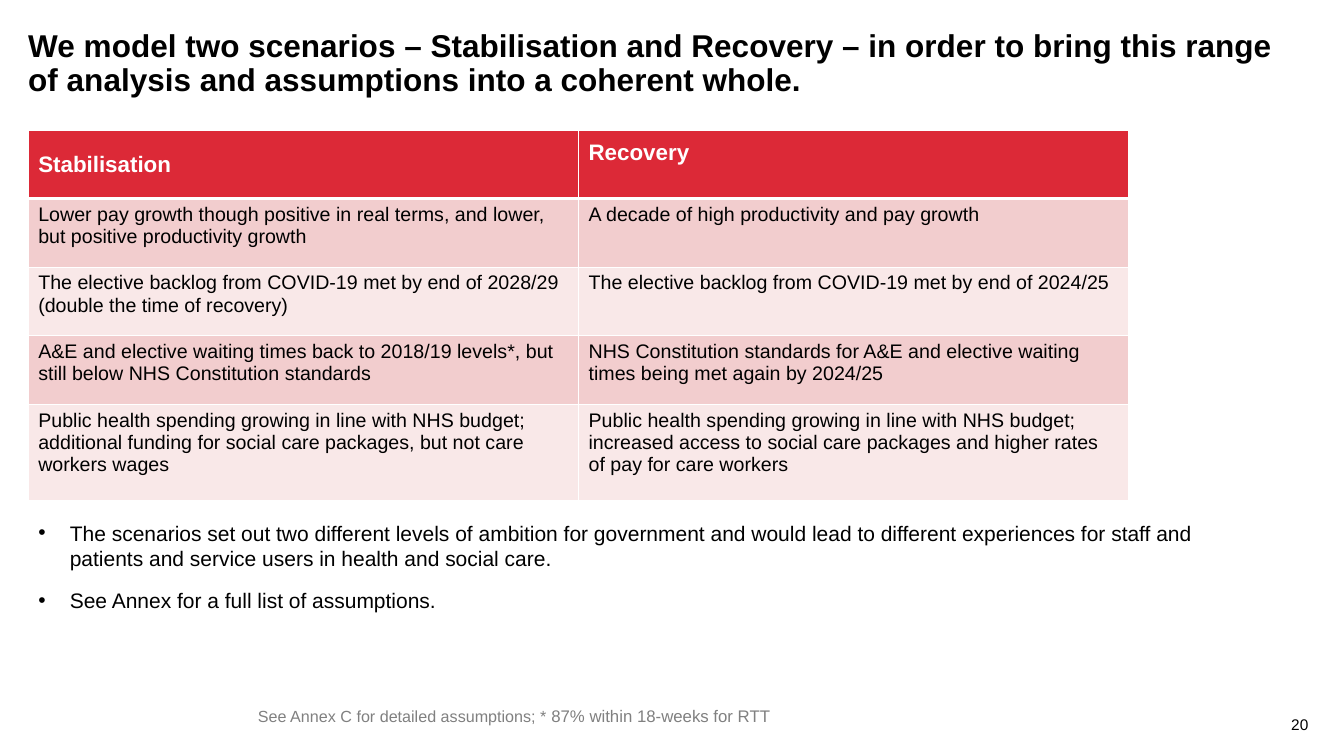
import pptx
import pptx.util
import pptx.dml.color
import pptx.enum.text
import pptx.oxml

Pt = pptx.util.Pt
ALIGN = pptx.enum.text.PP_ALIGN
ANCHOR = pptx.enum.text.MSO_ANCHOR
AUTO_SIZE = pptx.enum.text.MSO_AUTO_SIZE
A_NS = 'xmlns:a="http://schemas.openxmlformats.org/drawingml/2006/main"'

BLACK, WHITE, GREY, RED = "000000", "FFFFFF", "808080", "DC2937"
BANDS = ("F2CDCE", "F9E8E8")

TITLE = ("We model two scenarios – Stabilisation and Recovery – in order to bring "
         "this range of analysis and assumptions into a coherent whole.")
SCENARIOS = [
    ("Stabilisation", "Recovery"),
    ("Lower pay growth though positive in real terms, and lower, but positive productivity growth",
     "A decade of high productivity and pay growth"),
    ("The elective backlog from COVID-19 met by end of 2028/29 (double the time of recovery)",
     "The elective backlog from COVID-19 met by end of 2024/25"),
    ("A&E and elective waiting times back to 2018/19 levels*, but still below NHS Constitution standards",
     "NHS Constitution standards for A&E and elective waiting times being met again by 2024/25"),
    ("Public health spending growing in line with NHS budget; additional funding for social care "
     "packages, but not care workers wages",
     "Public health spending growing in line with NHS budget; increased access to social care "
     "packages and higher rates of pay for care workers"),
]
BULLETS = [
    "The scenarios set out two different levels of ambition for government and would lead to "
    "different experiences for staff and patients and service users in health and social care.",
    "See Annex for a full list of assumptions.",
]
FOOTNOTE = [("See Annex C for detailed assumptions; *", 11.5),
            (" 87% within 18-weeks for RTT", 12)]
PAGE_NUMBER = "20"

LEFT = 20.16
COLUMN_WIDTH = 393.12
ROW_HEIGHTS = (48.96, 48.96, 48.96, 48.96, 69.12)
BULLET_INDENT = 22.5


def rgb(hex_colour):
    return pptx.dml.color.RGBColor.from_string(hex_colour)


def add_text(p, text, size, colour=BLACK, bold=False):
    r = p.add_run()
    r.text = text
    r.font.name = "Arial"
    r.font.size = Pt(size)
    r.font.bold = bold
    r.font.color.rgb = rgb(colour)


def place(sp, left, top, width, height):
    sp.left, sp.top, sp.width, sp.height = map(Pt, (left, top, width, height))


def set_frame(tf, margin=None, anchor=ANCHOR.TOP, auto_size=AUTO_SIZE.NONE):
    tf.word_wrap = True
    tf.auto_size = auto_size
    tf.vertical_anchor = anchor
    if margin is not None:
        tf.margin_left = tf.margin_top = tf.margin_right = tf.margin_bottom = Pt(margin)


def add_label(slide, box, runs, align=ALIGN.LEFT, colour=BLACK):
    sp = slide.shapes.add_textbox(*map(Pt, box))
    set_frame(sp.text_frame, margin=0)
    p = sp.text_frame.paragraphs[0]
    p.alignment = align
    for text, size in runs:
        add_text(p, text, size, colour)


def add_bullet(p):
    pPr = p._p.get_or_add_pPr()
    pPr.set("marL", str(Pt(BULLET_INDENT)))
    pPr.set("indent", str(-Pt(BULLET_INDENT)))
    pPr.append(pptx.oxml.parse_xml(f'<a:buFont {A_NS} typeface="Arial"/>'))
    pPr.append(pptx.oxml.parse_xml(f'<a:buChar {A_NS} char="•"/>'))


def set_borders(cell, **widths):
    """Draw white borders, with widths in points keyed by side: L, R, T, B."""
    tcPr = cell._tc.get_or_add_tcPr()
    for side, width in widths.items():
        tcPr.append(pptx.oxml.parse_xml(
            f'<a:ln{side} {A_NS} w="{Pt(width)}"><a:solidFill>'
            f'<a:srgbClr val="{WHITE}"/></a:solidFill></a:ln{side}>'))


def add_scenario_table(slide):
    table = slide.shapes.add_table(
        len(SCENARIOS), 2, Pt(LEFT), Pt(92.88),
        Pt(2 * COLUMN_WIDTH), Pt(sum(ROW_HEIGHTS))).table
    for column in table.columns:
        column.width = Pt(COLUMN_WIDTH)
    for i, (texts, height) in enumerate(zip(SCENARIOS, ROW_HEIGHTS)):
        table.rows[i].height = Pt(height)
        header = i == 0
        for j, text in enumerate(texts):
            cell = table.cell(i, j)
            set_borders(cell, L=1, R=1, T=3 if i == 1 else 1, B=3 if header else 1)
            cell.fill.solid()
            cell.fill.fore_color.rgb = rgb(RED if header else BANDS[(i - 1) % 2])
            cell.vertical_anchor = ANCHOR.MIDDLE if header else ANCHOR.TOP
            add_text(cell.text_frame.paragraphs[0], text, 16 if header else 14,
                     WHITE if header else BLACK, bold=header)
    table.cell(0, 1).margin_bottom = Pt(19.5)  # "Recovery" sits above the middle


def main():
    prs = pptx.Presentation()
    prs.slide_width, prs.slide_height = Pt(960), Pt(540)
    slide = prs.slides.add_slide(prs.slide_layouts[1])

    title = slide.shapes.title
    place(title, LEFT, 21.6, 907.2, 48.24)
    set_frame(title.text_frame, margin=0, anchor=ANCHOR.MIDDLE)
    p = title.text_frame.paragraphs[0]
    p.alignment = ALIGN.LEFT
    p.line_spacing = 0.9
    add_text(p, TITLE, 22.5, bold=True)

    add_scenario_table(slide)

    body = slide.placeholders[1]
    place(body, LEFT, 367.92, 867.6, 74.16)
    tf = body.text_frame
    set_frame(tf, auto_size=AUTO_SIZE.SHAPE_TO_FIT_TEXT)
    for i, text in enumerate(BULLETS):
        p = tf.add_paragraph() if i else tf.paragraphs[0]
        add_bullet(p)
        p.space_before, p.space_after = Pt(0), Pt(12)
        add_text(p, text, 15)

    add_label(slide, (184.32, 504, 701.28, 14.4), FOOTNOTE, colour=GREY)
    add_label(slide, (906.48, 510.48, 28.08, 14.4), [(PAGE_NUMBER, 11)], align=ALIGN.RIGHT)

    prs.save("out.pptx")


if __name__ == "__main__":
    main()
